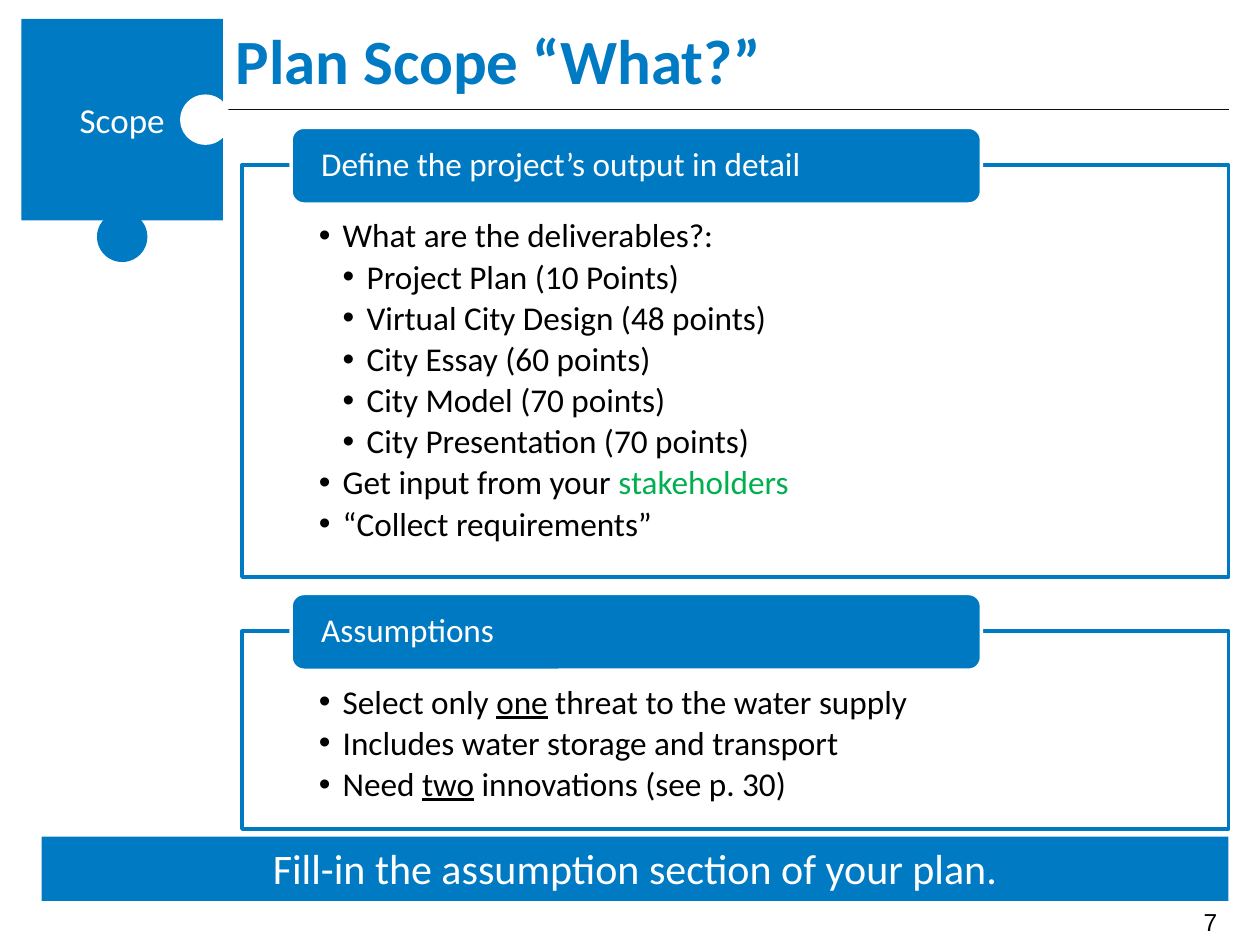
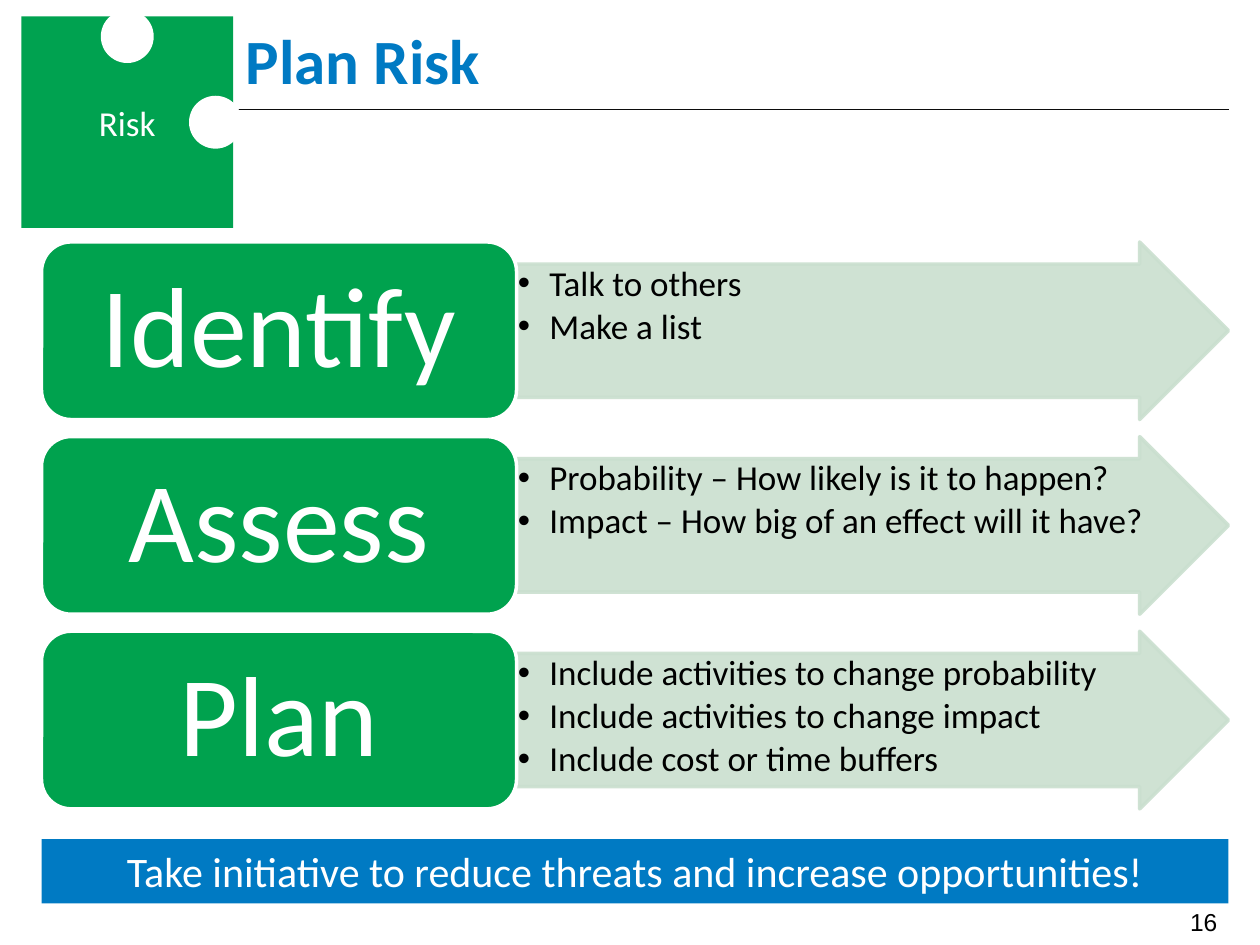
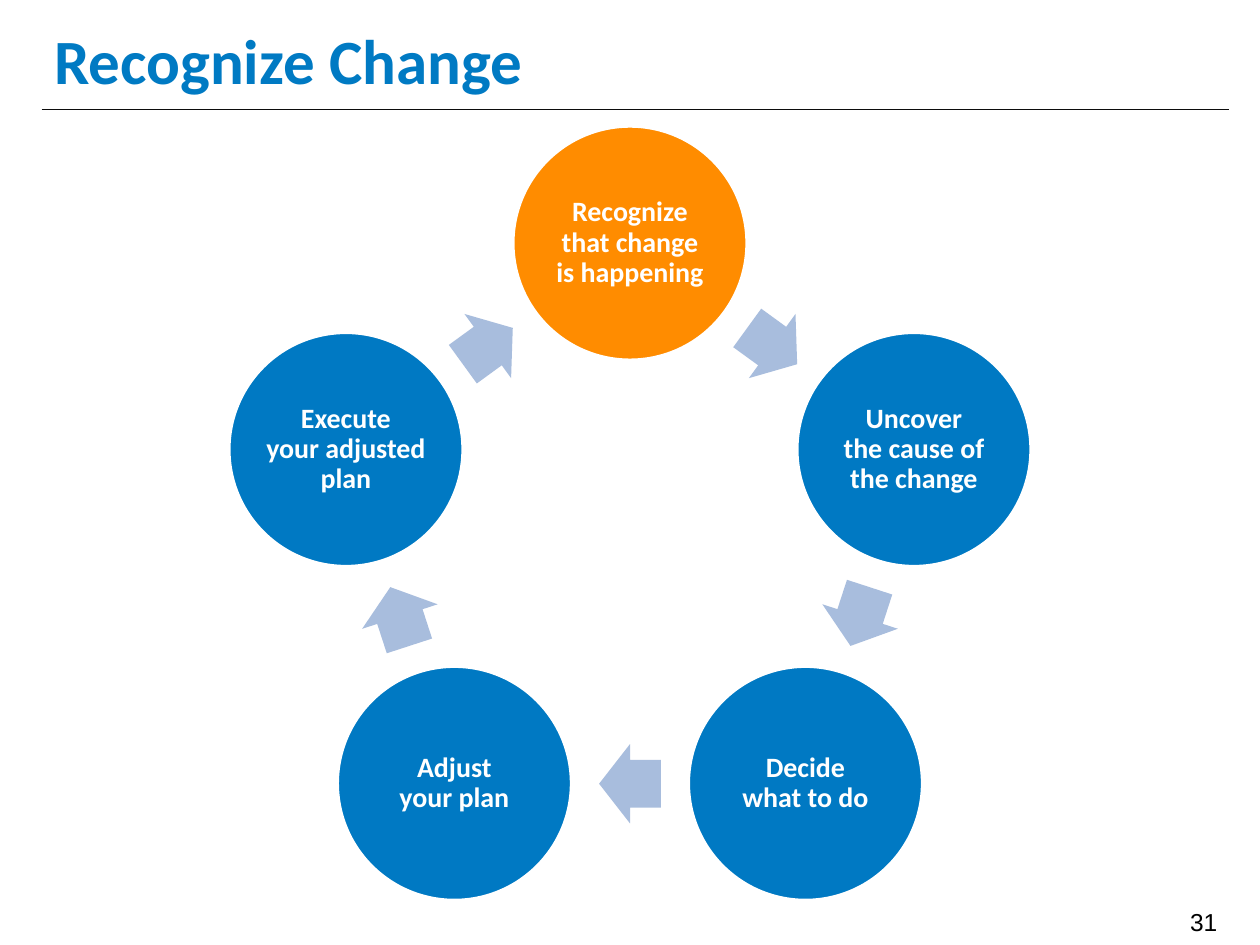
"""Build three project-planning slides: scope, risk and change."""
from math import cos, radians, sin

from lxml import etree
from pptx import Presentation
from pptx.dml.color import RGBColor
from pptx.enum.shapes import MSO_CONNECTOR, MSO_SHAPE
from pptx.enum.text import MSO_ANCHOR, MSO_AUTO_SIZE, PP_ALIGN
from pptx.oxml.ns import qn
from pptx.util import Inches, Pt

RECT, ROUND = MSO_SHAPE.RECTANGLE, MSO_SHAPE.ROUNDED_RECTANGLE
OVAL, ARROW = MSO_SHAPE.OVAL, MSO_SHAPE.RIGHT_ARROW
STRAIGHT = MSO_CONNECTOR.STRAIGHT
TOP, MIDDLE = MSO_ANCHOR.TOP, MSO_ANCHOR.MIDDLE
LEFT, CENTER, RIGHT = PP_ALIGN.LEFT, PP_ALIGN.CENTER, PP_ALIGN.RIGHT
NO_FIT = MSO_AUTO_SIZE.NONE

BLUE, DEEP, GREEN, LEAF = "007AC3", "0079C3", "00A250", "00A24E"
MINT, LIME, ORANGE, PALE = "CADFCF", "00B050", "FF8C00", "A8BDDD"
WHITE, BLACK, INK = "FFFFFF", "000000", "0C0C0C"
EDGE, WIDE = 0.33, 9.42
INSETS = (0.1, 0.05, 0.1, 0.05)


def color(code):
    """Turn a hex string into a colour."""
    return RGBColor.from_string(code)


def place(shape, left, top, width, height):
    """Move and size a shape."""
    shape.left, shape.top = Inches(left), Inches(top)
    shape.width, shape.height = Inches(width), Inches(height)


def paint(shape, fill, line=None):
    """Set the fill and the outline of a shape."""
    shape.fill.solid()
    shape.fill.fore_color.rgb = color(fill)
    if line:
        shape.line.color.rgb = color(line)
        shape.line.width = Pt(2)
    else:
        shape.line.fill.background()


def fade(shape):
    """Make the fill and outline of a shape 90% opaque."""
    for tint in shape.element.spPr.iter(qn("a:srgbClr")):
        etree.SubElement(tint, qn("a:alpha"), val="90000")


def draw(slide, kind, box, fill, line=None):
    """Add a flat preset shape."""
    shape = slide.shapes.add_shape(kind, *map(Inches, box))
    shape.shadow.inherit = False
    paint(shape, fill, line)
    return shape


def setup(frame, insets, anchor):
    """Set the wrap, insets and anchor of a text frame."""
    frame.word_wrap = True
    frame.auto_size = NO_FIT
    frame.vertical_anchor = anchor
    (frame.margin_left, frame.margin_top,
     frame.margin_right, frame.margin_bottom) = map(Inches, insets)


def style(para, size, tint, bold=False, face="Calibri"):
    """Set the font of a paragraph."""
    font = para.font
    font.name, font.size, font.bold = face, Pt(size), bold
    font.color.rgb = color(tint)


def write(shape, text, size, tint=WHITE, align=CENTER, insets=INSETS,
          anchor=MIDDLE, space=1.0, bold=False, face="Calibri"):
    """Put one paragraph of text in a shape."""
    setup(shape.text_frame, insets, anchor)
    para = shape.text_frame.paragraphs[0]
    para.text = text
    para.alignment, para.line_spacing = align, space
    style(para, size, tint, bold, face)


def bullet(para, level, step):
    """Give a paragraph a black bullet and a hanging indent."""
    props = para._p.get_or_add_pPr()
    props.set("marL", str(Inches(step * (level + 1))))
    props.set("indent", str(-Inches(step)))
    tint = etree.SubElement(props, qn("a:buClr"))
    etree.SubElement(tint, qn("a:srgbClr"), val=BLACK)
    etree.SubElement(props, qn("a:buChar"), char="•")


def fill_list(holder, box, items, size, step, insets, mark=None):
    """Fill a body placeholder with (level, text); *stars* get the mark."""
    place(holder, *box)
    frame = holder.text_frame
    setup(frame, insets, TOP)
    for i, (level, text) in enumerate(items):
        para = frame.add_paragraph() if i else frame.paragraphs[0]
        para.level, para.line_spacing = level, 0.9
        para.space_before = Pt(3 if i else 0)
        bullet(para, level, step)
        style(para, size, BLACK)
        for j, part in enumerate(text.split("*")):
            run = para.add_run()
            run.text = part
            if j % 2:
                mark(run.font)


def green(font):
    """Colour a run green."""
    font.color.rgb = color(LIME)


def under(font):
    """Underline a run."""
    font.underline = True


def raise_up(shape):
    """Bring a shape to the front."""
    shape.element.getparent().append(shape.element)


def start(deck, layout, title, left, number):
    """Add a slide with its title, rule and page number."""
    slide = deck.slides.add_slide(deck.slide_layouts[layout])
    rule = slide.shapes.add_connector(
        STRAIGHT, Inches(EDGE), Inches(0.87), Inches(EDGE + WIDE), Inches(0.87))
    rule.line.color.rgb = color(INK)
    rule.line.width = Pt(0.75)
    etree.SubElement(rule.element.spPr, qn("a:effectLst"))
    page = slide.shapes.add_textbox(*map(Inches, (8.64, 7.15, 1.12, 0.34)))
    write(page, str(number), 14, BLACK, RIGHT, anchor=TOP, face="Arial")
    head = slide.shapes.title
    place(head, left, 0.08, EDGE + WIDE - left, 0.78)
    write(head, title, 36, BLUE, LEFT, bold=True)
    return slide


def banner(slide, top, text):
    """Add the blue band at the foot."""
    band = draw(slide, RECT, (EDGE, top, WIDE, 0.51), BLUE)
    write(band, text, 24, anchor=TOP)


def puzzle(slide, top, side, text, fill, knobs):
    """Add a puzzle piece; each knob is (left, top, fill)."""
    piece = draw(slide, RECT, (0.17, top, side, side), fill)
    write(piece, text, 20)
    for x, y, tint in knobs:
        draw(slide, OVAL, (x, y, side / 4, side / 4), tint)
    raise_up(slide.shapes.title)


def panel(slide, holder, top, height, head, items, mark):
    """Add an outlined list with a heading tab."""
    paint(holder, WHITE, DEEP)
    fill_list(holder, (1.92, top, 7.83, height), items, 19, 0.19,
              (0.61, 0.43, 0.61, 0.15), mark)
    tab = draw(slide, ROUND, (2.31, top - 0.3, 5.48, 0.61), DEEP, WHITE)
    write(tab, head, 19, align=LEFT, insets=(0.21, 0, 0.21, 0), space=0.9)


def step_row(slide, holder, top, name, lines):
    """Add a named step with an arrow and its list."""
    arrow = draw(slide, ARROW, (4.1, top, 5.65, 1.41), MINT, MINT)
    arrow.adjustments[0] = 0.75
    fade(arrow)
    fill_list(holder, (4.1, top + 0.18, 5.12, 1.05),
              [(0, line) for line in lines], 20, 0.25, (0.01,) * 4)
    raise_up(holder)
    label = draw(slide, ROUND, (EDGE, top, 3.77, 1.41), LEAF, WHITE)
    write(label, name, 65, insets=(0.27, 0.14, 0.27, 0.14), space=0.9)


def orbit(angle, radius, width, height):
    """Give the box centred at an angle clockwise from the top."""
    turn = radians(angle)
    return (5 + radius * sin(turn) - width / 2,
            4.3 - radius * cos(turn) - height / 2, width, height)


def cycle(slide, names):
    """Add a ring of circles with arrows between them."""
    gap = 360 / len(names)
    for i, name in enumerate(names):
        disc = draw(slide, OVAL, orbit(i * gap, 2.37, 1.86, 1.86),
                    DEEP if i else ORANGE, WHITE)
        write(disc, name, 16, insets=(0.02,) * 4, space=0.9, bold=True)
        angle = (i + 0.5) * gap
        arrow = draw(slide, ARROW, orbit(angle, 1.92, 0.49, 0.63), PALE)
        arrow.adjustments[0] = 0.6
        arrow.rotation = angle


def scope(deck):
    """Build the scope slide."""
    slide = start(deck, 3, "Plan Scope “What?”", 1.77, 7)
    banner(slide, 6.64, "Fill-in the assumption section of your plan.")
    puzzle(slide, 0.15, 1.6, "Scope", BLUE,
           [(0.77, 1.68, BLUE), (1.43, 0.75, WHITE)])
    goals = [(0, "What are the deliverables?:"),
             (1, "Project Plan (10 Points)"),
             (1, "Virtual City Design (48 points)"),
             (1, "City Essay (60 points)"),
             (1, "City Model (70 points)"),
             (1, "City Presentation (70 points)"),
             (0, "Get input from your *stakeholders*"),
             (0, "“Collect requirements”")]
    limits = [(0, "Select only *one* threat to the water supply"),
              (0, "Includes water storage and transport"),
              (0, "Need *two* innovations (see p. 30)")]
    upper, lower = list(slide.placeholders)[1:]
    panel(slide, upper, 1.31, 3.27, "Define the project’s output in detail",
          goals, green)
    panel(slide, lower, 5.01, 1.57, "Assumptions", limits, under)


def risk(deck):
    """Build the risk slide."""
    slide = start(deck, 4, "Plan Risk", 1.85, 16)
    banner(slide, 6.66,
           "Take initiative to reduce threats and increase opportunities!")
    puzzle(slide, 0.13, 1.68, "Risk", GREEN,
           [(0.8, 0.08, WHITE), (1.5, 0.76, WHITE)])
    steps = [("Identify", ["Talk to others", "Make a list"]),
             ("Assess", ["Probability – How likely is it to happen?",
                         "Impact – How big of an effect will it have?"]),
             ("Plan", ["Include activities to change probability",
                       "Include activities to change impact",
                       "Include cost or time buffers"])]
    *holders, spare = list(slide.placeholders)[1:]
    spare.element.getparent().remove(spare.element)
    for i, (holder, (name, lines)) in enumerate(zip(holders, steps)):
        step_row(slide, holder, 1.92 + i * 1.545, name, lines)


def change(deck):
    """Build the change slide."""
    slide = start(deck, 5, "Recognize Change", EDGE, 31)
    cycle(slide, ["Recognize that change is happening",
                  "Uncover\vthe cause of the change",
                  "Decide\vwhat to do",
                  "Adjust\vyour plan",
                  "Execute\vyour adjusted plan"])


def main():
    """Build and save the deck."""
    deck = Presentation()
    deck.slide_width, deck.slide_height = Inches(10), Inches(7.5)
    scope(deck)
    risk(deck)
    change(deck)
    deck.save("out.pptx")


if __name__ == "__main__":
    main()
